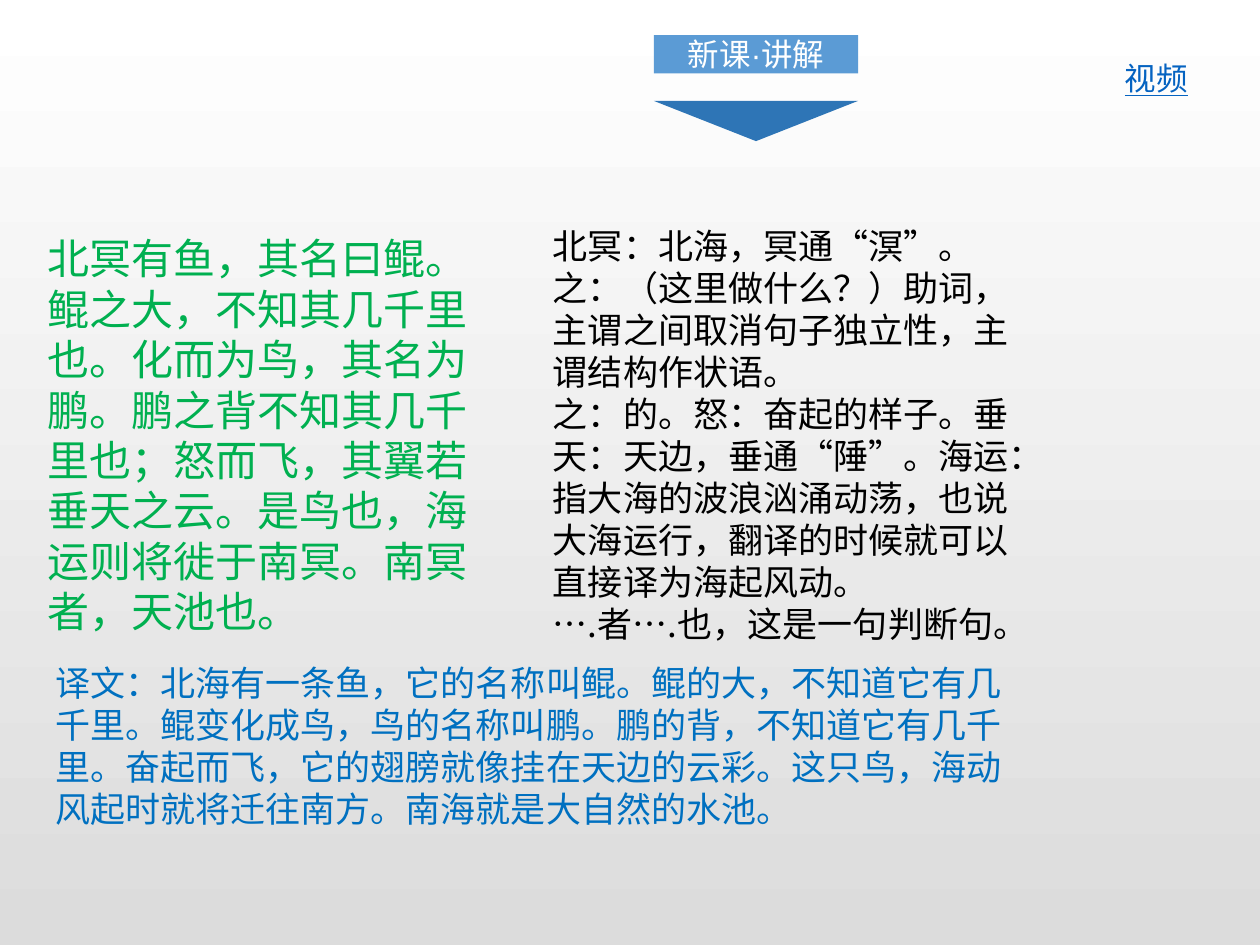
from dataclasses import dataclass

from lxml import etree
from pptx import Presentation
from pptx.dml.color import RGBColor
from pptx.enum.shapes import MSO_SHAPE
from pptx.enum.text import MSO_ANCHOR, MSO_AUTO_SIZE, PP_ALIGN
from pptx.oxml.ns import qn
from pptx.util import Inches, Pt

RECTANGLE = MSO_SHAPE.RECTANGLE
TRIANGLE = MSO_SHAPE.ISOSCELES_TRIANGLE
MIDDLE = MSO_ANCHOR.MIDDLE
CENTER = PP_ALIGN.CENTER
FIT_SHAPE = MSO_AUTO_SIZE.SHAPE_TO_FIT_TEXT
BLANK_LAYOUT = 6


@dataclass(frozen=True)
class Theme:
    latin: str = "Arial"
    chinese: str = "Noto Sans CJK SC"
    label_size: int = 18
    note_size: int = 20
    passage_size: int = 24
    background_top: str = "FFFFFF"
    background_bottom: str = "DCDCDC"
    link: str = "0563C1"
    banner: str = "5B9BD5"
    banner_text: str = "FFFFFF"
    arrow: str = "2E75B6"
    passage: str = "00B050"
    notes: str = "000000"
    translation: str = "0070C0"


THEME = Theme()

PASSAGE = [
    "北冥有鱼，其名曰鲲。鲲之大，不知其几千里也。化而为鸟，其名为鹏。"
    "鹏之背不知其几千里也；怒而飞，其翼若垂天之云。是鸟也，"
    "海运则将徙于南冥。南冥者，天池也。"
]
NOTES = [
    "北冥：北海，冥通“溟”。",
    "之：（这里做什么？）助词，主谓之间取消句子独立性，主谓结构作状语。",
    "之：的。怒：奋起的样子。垂天：天边，垂通“陲”。海运：指大海的波浪汹涌动荡，"
    "也说大海运行，翻译的时候就可以直接译为海起风动。",
    "….者….也，这是一句判断句。",
]
TRANSLATION = [
    "译文：北海有一条鱼，它的名称叫鲲。鲲的大，不知道它有几千里。"
    "鲲变化成鸟，鸟的名称叫鹏。鹏的背，不知道它有几千里。奋起而飞，"
    "它的翅膀就像挂在天边的云彩。这只鸟，海动风起时就将迁往南方。"
    "南海就是大自然的水池。"
]


def inches(box):
    return [Inches(length) for length in box]


def write(text_frame, lines, size, color, font, underline=None):
    """Fill a text frame and give every run the same look."""
    text_frame.text = "\n".join(lines)
    for paragraph in text_frame.paragraphs:
        for run in paragraph.runs:
            run.font.size = Pt(size)
            run.font.name = font
            run.font.underline = underline
            run.font.color.rgb = RGBColor.from_string(color)
            # East Asian typeface follows the Latin one
            properties = run.font._element
            east_asian = etree.Element(qn("a:ea"), typeface=THEME.chinese)
            properties.find(qn("a:latin")).addnext(east_asian)


def add_text(slide, box, lines, size, color, font=THEME.chinese, wrap=True, underline=None):
    text_frame = slide.shapes.add_textbox(*inches(box)).text_frame
    text_frame.word_wrap = wrap
    text_frame.auto_size = FIT_SHAPE
    write(text_frame, lines, size, color, font, underline)


def add_filled_shape(group, kind, box, color):
    shape = group.shapes.add_shape(kind, *inches(box))
    shape.shadow.inherit = False
    shape.fill.solid()
    shape.fill.fore_color.rgb = RGBColor.from_string(color)
    shape.line.fill.background()
    return shape


def paint_background(slide):
    fill = slide.background.fill
    fill.gradient()
    fill.gradient_angle = 270
    for stop, color in zip(fill.gradient_stops, (THEME.background_top, THEME.background_bottom)):
        stop.color.rgb = RGBColor.from_string(color)


def add_section_marker(slide, box):
    """Banner label above a triangle that points down."""
    left, top, width, height = box
    group = slide.shapes.add_group_shape()
    banner_height, arrow_height = height * 0.36, height * 0.38

    banner = add_filled_shape(group, RECTANGLE, (left, top, width, banner_height), THEME.banner)
    text_frame = banner.text_frame
    text_frame.margin_left = text_frame.margin_right = 0
    text_frame.margin_top = text_frame.margin_bottom = 0
    text_frame.word_wrap = True
    text_frame.vertical_anchor = MIDDLE
    write(text_frame, ["新课·讲解"], THEME.label_size, THEME.banner_text, THEME.latin)
    text_frame.paragraphs[0].alignment = CENTER

    arrow_top = top + height - arrow_height
    arrow = add_filled_shape(group, TRIANGLE, (left, arrow_top, width, arrow_height), THEME.arrow)
    arrow.rotation = 180


def add_lesson(slide, box):
    """Passage on the left, notes on the right, translation underneath."""
    left, top, width, height = box
    add_text(slide, (left, top + 0.07, width * 0.457, height * 0.68),
             PASSAGE, THEME.passage_size, THEME.passage)
    add_text(slide, (left + width - 3.91, top, 3.91, height * 0.705),
             NOTES, THEME.note_size, THEME.notes)
    add_text(slide, (left + 0.06, top + height * 0.705, width - 0.14, height * 0.295),
             TRANSLATION, THEME.note_size, THEME.translation)


def main():
    presentation = Presentation()
    presentation.slide_width, presentation.slide_height = Inches(10), Inches(7.5)
    slide = presentation.slides.add_slide(presentation.slide_layouts[BLANK_LAYOUT])

    paint_background(slide)
    # Video label
    add_text(slide, (8.83, 0.42, 0.7, 0.4), ["视频"], THEME.label_size, THEME.link,
             font=THEME.latin, wrap=False, underline=True)
    add_section_marker(slide, (5.19, 0.28, 1.62, 0.84))
    add_lesson(slide, (0.28, 1.73, 7.92, 4.92))

    presentation.save("out.pptx")


if __name__ == "__main__":
    main()
